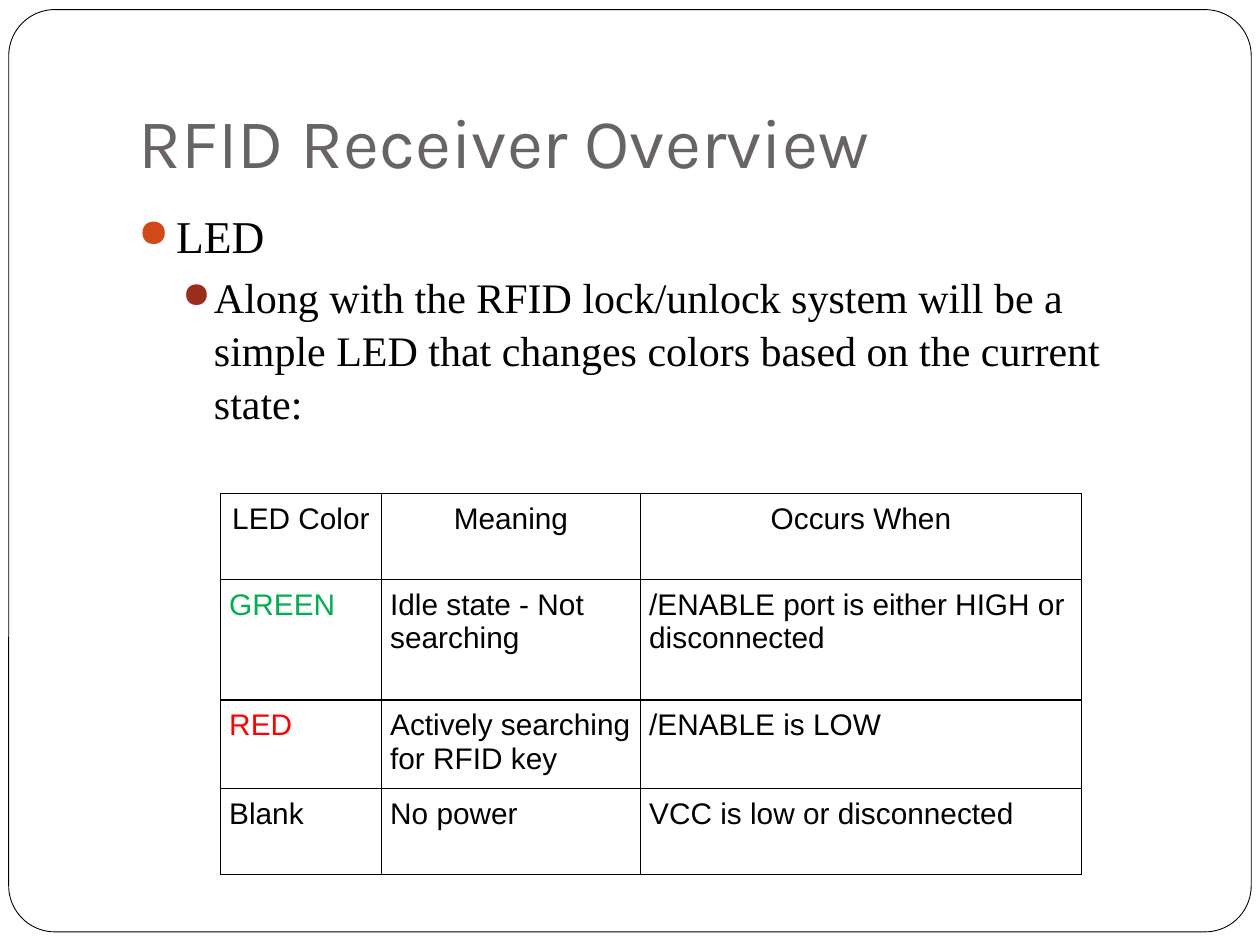
import pptx
import pptx.dml.color
import pptx.enum.shapes
import pptx.enum.text
import pptx.oxml
import pptx.oxml.ns
import pptx.util
import lxml.etree

Pt = pptx.util.Pt
ALIGN = pptx.enum.text.PP_ALIGN
ANCHOR = pptx.enum.text.MSO_ANCHOR

COLORS = {
    "paper": "FFFFFF",
    "ink": "000000",
    "title": "696464",
    "bullet": "D34817",
    "sub_bullet": "9B2D1F",
    "green": "00B050",
    "red": "FF0000",
}

LED_STATES = [
    ("LED Color", "Meaning", "Occurs When"),
    ("GREEN", "Idle state - Not searching", "/ENABLE port is either HIGH or disconnected"),
    ("RED", "Actively searching for RFID key", "/ENABLE is LOW"),
    ("Blank", "No power", "VCC is low or disconnected"),
]
STATE_COLORS = {"GREEN": "green", "RED": "red"}


def rgb(name):
    return pptx.dml.color.RGBColor.from_string(COLORS[name])


def add_element(parent, tag, **attributes):
    element = lxml.etree.SubElement(parent, pptx.oxml.ns.qn(tag))
    for key, value in attributes.items():
        element.set(key, str(value))
    return element


def write(paragraph, text, font, size, color="ink", align=ALIGN.LEFT, before=0, spacing=1.0):
    paragraph.alignment = align
    paragraph.space_before = Pt(before)
    paragraph.line_spacing = spacing
    run = paragraph.add_run()
    run.text = text
    run.font.name = font
    run.font.size = Pt(size)
    run.font.color.rgb = rgb(color)


def add_bullet(paragraph, color, left, hanging):
    properties = paragraph._p.get_or_add_pPr()
    properties.set("marL", str(Pt(left)))
    properties.set("indent", str(-Pt(hanging)))
    bullet_color = add_element(properties, "a:buClr")
    add_element(bullet_color, "a:srgbClr", val=COLORS[color])
    add_element(properties, "a:buSzPct", val=85000)
    add_element(properties, "a:buChar", char="●")


def border_cell(cell):
    properties = cell._tc.get_or_add_tcPr()
    for position, side in enumerate(("a:lnL", "a:lnR", "a:lnT", "a:lnB")):
        line = add_element(properties, side, w=Pt(0.75))
        fill = add_element(line, "a:solidFill")
        add_element(fill, "a:srgbClr", val=COLORS["ink"])
        properties.insert(position, line)


def add_frame(slide, left, top, width, height):
    frame = slide.shapes.add_shape(
        pptx.enum.shapes.MSO_SHAPE.ROUNDED_RECTANGLE, Pt(left), Pt(top), Pt(width), Pt(height))
    frame.adjustments[0] = 0.05
    frame.shadow.inherit = False
    frame.fill.solid()
    frame.fill.fore_color.rgb = rgb("paper")
    frame.line.color.rgb = rgb("ink")
    frame.line.width = Pt(0.5)
    slide.shapes.element.insert(2, frame.element)


def place_title(slide, left, top, width, height):
    title = slide.shapes.title
    title.left, title.top, title.width, title.height = map(Pt, (left, top, width, height))
    text_frame = title.text_frame
    text_frame.auto_size = pptx.enum.text.MSO_AUTO_SIZE.NONE
    text_frame.vertical_anchor = ANCHOR.BOTTOM
    text_frame.margin_bottom = Pt(7.2)
    write(text_frame.paragraphs[0], "RFID Receiver Overview", "Karla", 40, color="title")


def add_body(slide, left, top, width, height):
    body = slide.shapes.add_textbox(Pt(left), Pt(top), Pt(width), Pt(height))
    text_frame = body.text_frame
    text_frame.word_wrap = True
    heading = text_frame.paragraphs[0]
    write(heading, "LED", "Times New Roman", 26, before=5.8, spacing=1.05)
    add_bullet(heading, "bullet", 21.6, 21.6)
    detail = text_frame.add_paragraph()
    detail.level = 1
    write(detail, "Along with the RFID lock/unlock system will be a simple LED "
          "that changes colors based on the current state:",
          "Times New Roman", 24, before=3.7, spacing=1.05)
    add_bullet(detail, "sub_bullet", 43.2, 18)


def add_state_table(slide, left, top, column_widths, row_heights):
    table = slide.shapes.add_table(
        len(row_heights), len(column_widths), Pt(left), Pt(top),
        Pt(sum(column_widths)), Pt(sum(row_heights))).table
    table.first_row = False
    table.horz_banding = False
    for column, width in zip(table.columns, column_widths):
        column.width = Pt(width)
    for row_index, (row, height) in enumerate(zip(table.rows, row_heights)):
        row.height = Pt(height)
        for cell, text in zip(row.cells, LED_STATES[row_index]):
            cell.margin_left = cell.margin_right = Pt(5)
            cell.margin_top = cell.margin_bottom = Pt(5)
            cell.vertical_anchor = ANCHOR.TOP
            cell.fill.background()
            border_cell(cell)
            write(cell.text_frame.paragraphs[0], text, "Arial", 17,
                  color=STATE_COLORS.get(text, "ink"),
                  align=ALIGN.LEFT if row_index else ALIGN.CENTER)


def main():
    presentation = pptx.Presentation()
    presentation.slide_width = Pt(720)
    presentation.slide_height = Pt(540)
    slide = presentation.slides.add_slide(presentation.slide_layouts[5])
    add_frame(slide, 5, 5.5, 710, 527)
    place_title(slide, 72, 21.6, 612, 90)
    add_body(slide, 72, 114, 612, 360)
    add_state_table(slide, 126, 282, (92, 148, 252), (49, 69, 49, 49))
    presentation.save("out.pptx")


if __name__ == "__main__":
    main()
